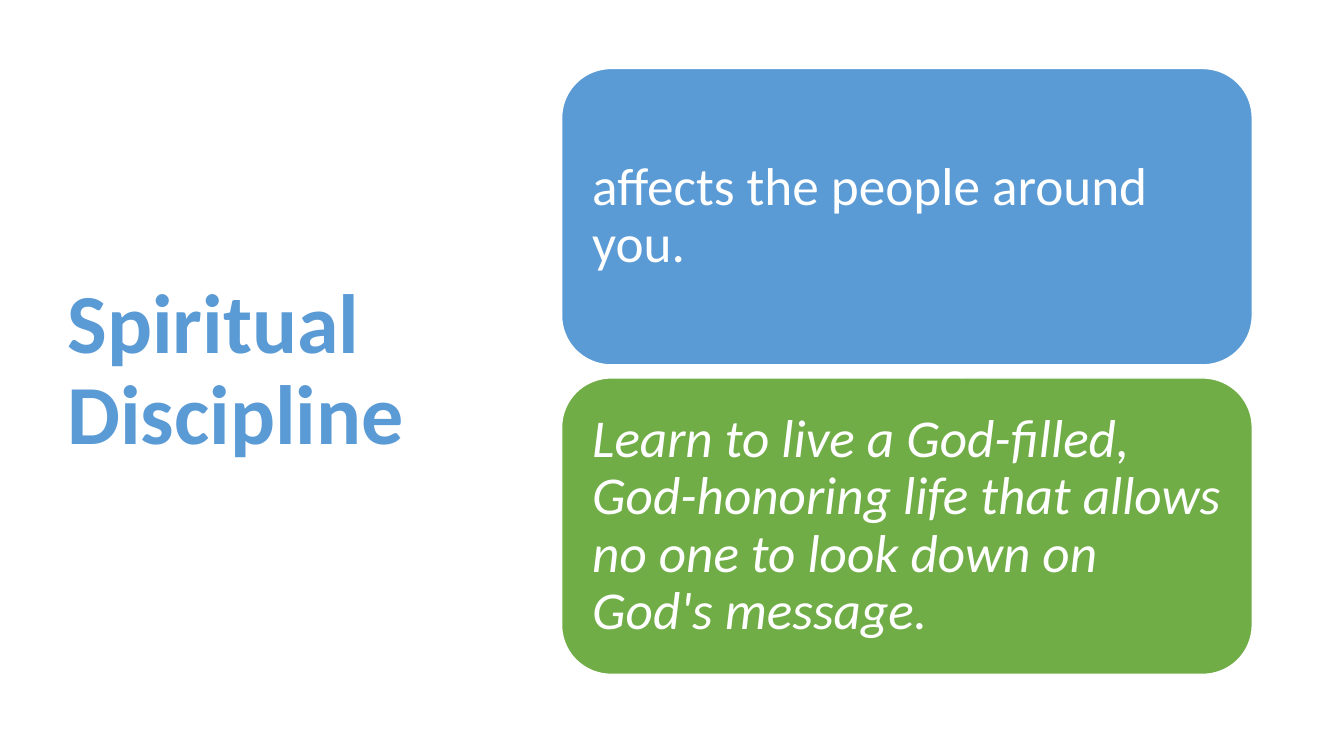
from pptx import Presentation
from pptx import util as u
from pptx.dml.color import RGBColor
from pptx.enum import shapes, text

SCALE = 9144
BLUE, GREEN, WHITE = "5B9BD5", "70AD47", "FFFFFF"
TOP = 68
CARDS = [
    ("affects the people around you.", BLUE, False),
    ("Learn to live a God-filled, God-honoring life that allows "
     "no one to look down on God's message.", GREEN, True),
]


def px(n):
    return u.Emu(n * SCALE)


def paint(part, shade):
    part.rgb = RGBColor.from_string(shade)


def write(shape, words, size, shade, inset, bold=False, slant=False):
    frame = shape.text_frame
    frame.word_wrap = True
    frame.vertical_anchor = text.MSO_ANCHOR.MIDDLE
    frame.margin_left = frame.margin_right = px(inset)
    frame.margin_top = frame.margin_bottom = px(inset)
    line = frame.paragraphs[0]
    line.alignment = text.PP_ALIGN.LEFT
    line.line_spacing = 0.9
    run = line.add_run()
    run.text = words
    font = run.font
    font.name = "Calibri"
    font.size = u.Pt(size)
    font.bold = bold
    font.italic = slant
    paint(font.color, shade)


def title(slide, words):
    box = slide.shapes.add_textbox(px(57), px(TOP), px(416), px(602))
    write(box, words, 60, BLUE, 10, bold=True)


def card(slide, top, words, shade, slant):
    box = slide.shapes.add_shape(
        shapes.MSO_SHAPE.ROUNDED_RECTANGLE, px(557), px(top), px(685), px(294))
    box.shadow.inherit = False
    box.fill.solid()
    paint(box.fill.fore_color, shade)
    paint(box.line.color, WHITE)
    box.line.width = u.Pt(1)
    write(box, words, 38, WHITE, 16, slant=slant)


def main():
    deck = Presentation()
    deck.slide_width, deck.slide_height = px(1333), px(750)
    slide = deck.slides.add_slide(deck.slide_layouts[6])
    title(slide, "Spiritual Discipline")
    for row, (words, shade, slant) in enumerate(CARDS):
        card(slide, TOP + row * 307, words, shade, slant)
    deck.save("out.pptx")


if __name__ == "__main__":
    main()
